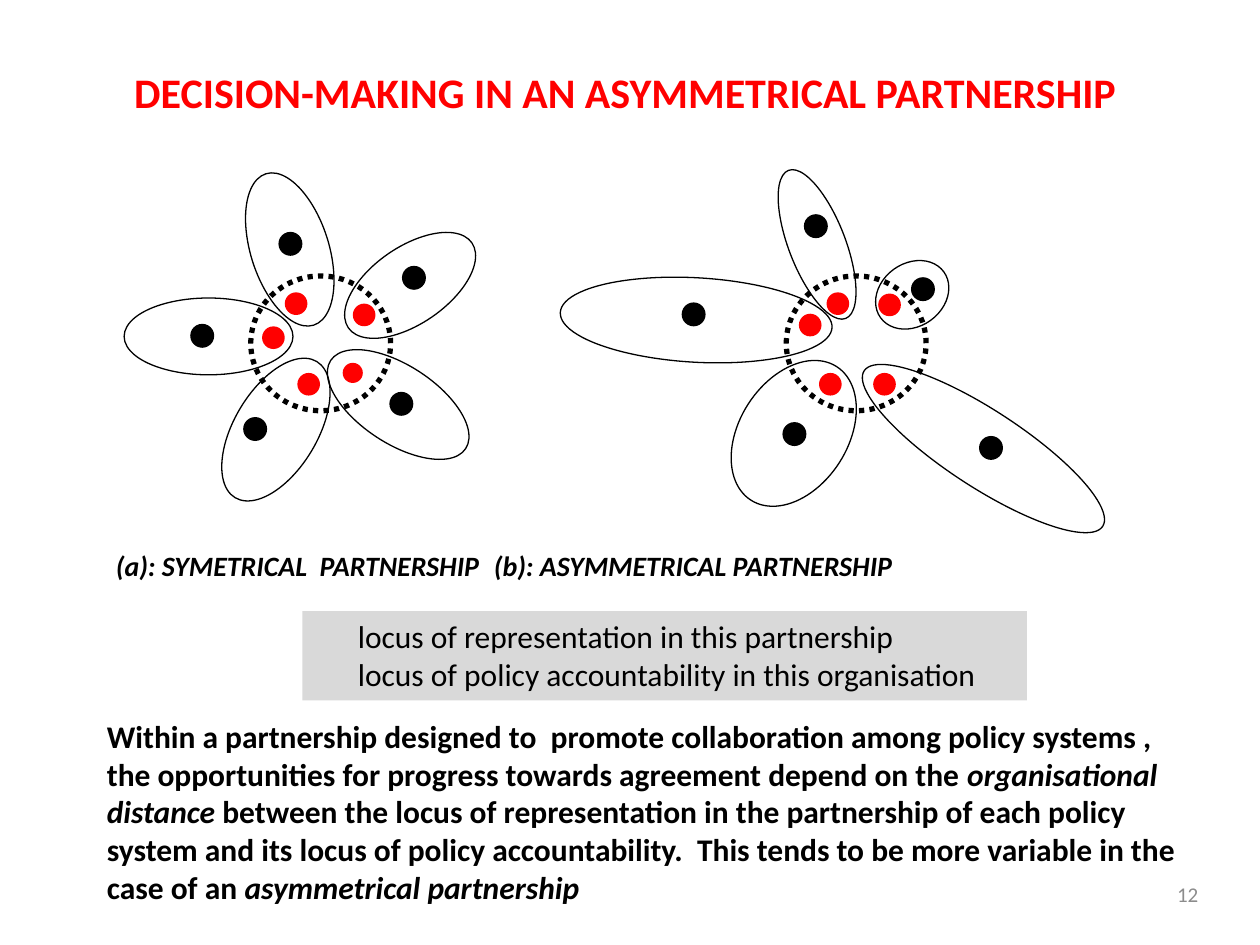
from dataclasses import dataclass

from lxml import etree
from pptx import Presentation
from pptx import util as u
from pptx.dml.color import RGBColor
from pptx.enum import dml, shapes, text
from pptx.oxml.ns import qn

COLUMNS, ROWS = 100, 75
CELL = u.Inches(0.1)
FONT = "Calibri"
COLOURS = {"ink": "000000", "accent": "FF0000", "panel": "D9D9D9", "muted": "8C8C8C"}
LOCUS = 1.9
REPRESENTATIVE = 1.8
HUB_SIZE = (11.1, 10.7)

Pair = tuple[float, float]


@dataclass
class Organisation:
    centre: Pair
    size: Pair
    angle: float
    accountability: Pair
    representation: Pair
    representation_size: float = REPRESENTATIVE


@dataclass
class Partnership:
    hub: Pair
    members: list[Organisation]


@dataclass
class Phrase:
    words: str
    bold: bool = False
    italic: bool = False


PARTNERSHIPS = [
    Partnership((25.45, 27.25), [
        Organisation((32.55, 22.65), (6.1, 11.9), 55.5, (32.85, 22.05), (28.9, 25)),
        Organisation((31.6, 32.1), (6.2, 12.8), 123.1, (31.85, 32.05), (28, 29.6), 1.6),
        Organisation((23, 19.8), (6.2, 12.6), 342.5, (23.05, 19.35), (23.5, 24.1)),
        Organisation((16.55, 26.7), (6.1, 13.4), 90, (16.05, 26.65), (21.7, 26.8)),
        Organisation((21.9, 34.1), (6.6, 12.6), 30.9, (20.25, 34.05), (24.5, 30.5)),
    ]),
    Partnership((67.95, 27.25), [
        Organisation((63, 34.4), (8.6, 12.6), 32.7, (63.05, 34.45), (65.9, 30.5)),
        Organisation((55.25, 25.4), (6.7, 21.6), 93.2, (55.05, 24.95), (64.3, 25.8)),
        Organisation((64.85, 19.4), (4.5, 12.6), 338.9, (64.75, 17.95), (66.5, 24.1)),
        Organisation((72.4, 23.4), (5, 6.2), 54, (73.25, 22.95), (70.6, 24.2)),
        Organisation((78.05, 35.6), (6.1, 22.6), 123.1, (78.65, 35.55), (70.2, 30.5)),
    ]),
]


def cells(*lengths: float) -> list[int]:
    return [round(length * CELL) for length in lengths]


def colour(name: str) -> RGBColor:
    return RGBColor.from_string(COLOURS[name])


def add_ellipse(group, centre: Pair, size: Pair, angle: float = 0):
    left, top = (middle - length / 2 for middle, length in zip(centre, size))
    ellipse = group.shapes.add_shape(shapes.MSO_SHAPE.OVAL, *cells(left, top, *size))
    ellipse.rotation = angle
    ellipse.shadow.inherit = False
    return ellipse


def add_outline(group, centre: Pair, size: Pair, angle: float = 0, weight: float = 0.75):
    outline = add_ellipse(group, centre, size, angle)
    outline.fill.background()
    outline.line.color.rgb = colour("ink")
    outline.line.width = u.Pt(weight)
    return outline


def add_dot(group, centre: Pair, diameter: float, fill: str) -> None:
    dot = add_ellipse(group, centre, (diameter, diameter))
    dot.fill.solid()
    dot.fill.fore_color.rgb = colour(fill)
    dot.line.fill.background()


def add_partnership(slide, partnership: Partnership) -> None:
    group = slide.shapes.add_group_shape()
    hub = add_outline(group, partnership.hub, HUB_SIZE, weight=3)
    hub.line.dash_style = dml.MSO_LINE.ROUND_DOT
    for member in partnership.members:
        add_outline(group, member.centre, member.size, member.angle)
        add_dot(group, member.accountability, LOCUS, "ink")
        add_dot(group, member.representation, member.representation_size, "accent")


def place(shape, left: float, top: float, width: float, height: float) -> None:
    shape.left, shape.top, shape.width, shape.height = cells(left, top, width, height)


def write(paragraph, phrases: list[Phrase], size: float, ink: str = "ink",
          align=text.PP_ALIGN.LEFT) -> None:
    paragraph.alignment = align
    for phrase in phrases:
        run = paragraph.add_run()
        run.text = phrase.words
        run.font.name = FONT
        run.font.size = u.Pt(size)
        run.font.bold = phrase.bold
        run.font.italic = phrase.italic
        run.font.color.rgb = colour(ink)


def prepare(shape, anchor=text.MSO_ANCHOR.TOP):
    frame = shape.text_frame
    frame.word_wrap = True
    frame.auto_size = text.MSO_AUTO_SIZE.NONE
    frame.vertical_anchor = anchor
    return frame


def add_captions(caption) -> None:
    place(caption, 5.1, 43, 77.2, 3.9)
    paragraph = prepare(caption).paragraphs[0]
    write(paragraph, [Phrase("(a): SYMETRICAL  PARTNERSHIP\t", True, True),
                      Phrase("(b): ASYMMETRICAL PARTNERSHIP", True, True)], 16)
    properties = paragraph._p.get_or_add_pPr()
    indent, second_caption = cells(3.1, 41.6)
    properties.set("marL", str(indent))
    properties.set("indent", "0")
    tabs = etree.SubElement(properties, qn("a:tabLst"))
    etree.SubElement(tabs, qn("a:tab"), pos=str(second_caption), algn="l")


def add_legend(slide) -> None:
    legend = slide.shapes.add_shape(shapes.MSO_SHAPE.RECTANGLE, *cells(24, 48.5, 57.5, 7.1))
    legend.shadow.inherit = False
    legend.fill.solid()
    legend.fill.fore_color.rgb = colour("panel")
    legend.line.fill.background()
    frame = prepare(legend)
    frame.margin_left = cells(4.4)[0]
    write(frame.paragraphs[0], [Phrase("locus of representation in this partnership")], 18)
    write(frame.add_paragraph(),
          [Phrase("locus of policy accountability in this organisation")], 18)


def main() -> None:
    deck = Presentation()
    deck.slide_width, deck.slide_height = cells(COLUMNS, ROWS)
    slide = deck.slides.add_slide(deck.slide_layouts[0])

    title = slide.shapes.title
    place(title, 7.5, 2.9, 85, 8.7)
    write(prepare(title, text.MSO_ANCHOR.MIDDLE).paragraphs[0],
          [Phrase("DECISION-MAKING IN AN ASYMMETRICAL PARTNERSHIP ", True)],
          24, "accent", text.PP_ALIGN.CENTER)

    add_captions(slide.placeholders[1])
    for partnership in PARTNERSHIPS:
        add_partnership(slide, partnership)
    add_legend(slide)

    conclusion = slide.shapes.add_textbox(*cells(7.5, 56.4, 87.4, 16.2))
    write(prepare(conclusion).paragraphs[0], [
        Phrase("Within a partnership designed to  promote collaboration among policy "
               "systems , the opportunities for progress towards agreement depend on the ", True),
        Phrase("organisational distance ", True, True),
        Phrase("between the locus of representation in the partnership of each policy "
               "system and its locus of policy accountability.  This tends to be more "
               "variable in the case of an ", True),
        Phrase("asymmetrical partnership", True, True),
    ], 18)

    page_number = slide.shapes.add_textbox(*cells(72.8, 69, 23.3, 4))
    write(prepare(page_number, text.MSO_ANCHOR.MIDDLE).paragraphs[0],
          [Phrase("12")], 12, "muted", text.PP_ALIGN.RIGHT)

    deck.save("out.pptx")


if __name__ == "__main__":
    main()
